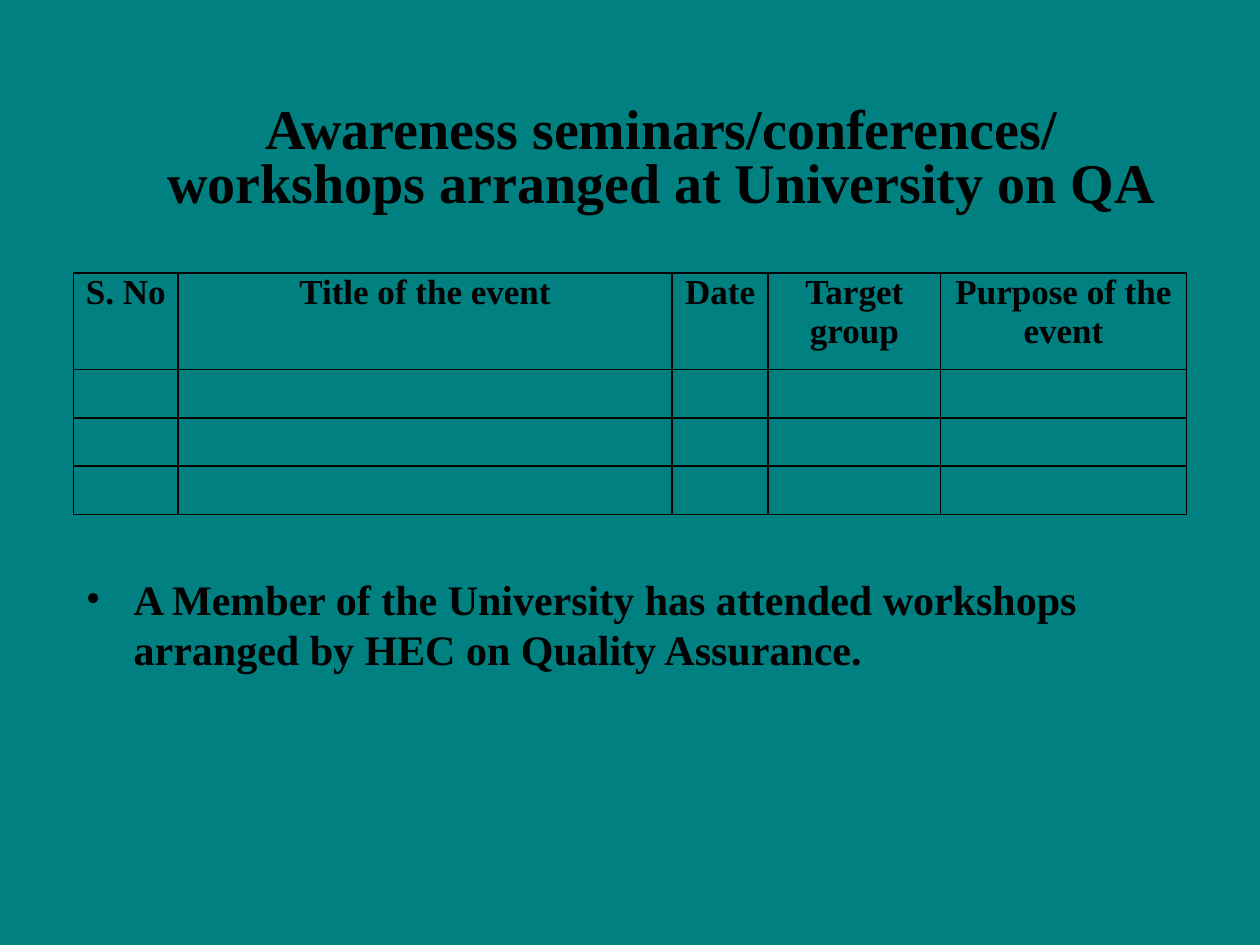
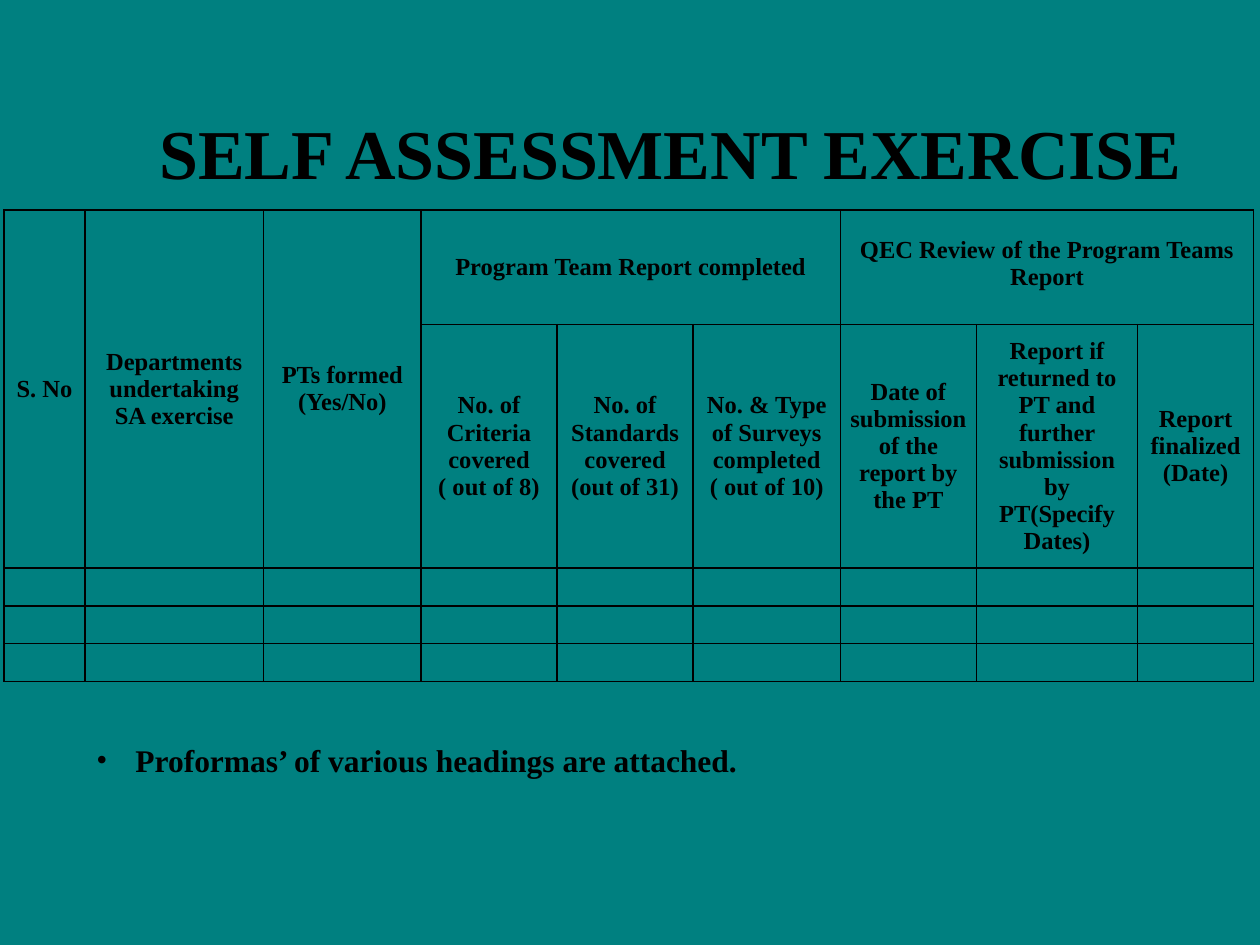
from lxml import etree
from pptx import Presentation
from pptx import util as u
from pptx.dml.color import RGBColor
from pptx.enum import text
from pptx.oxml.ns import qn

TEAL = RGBColor(0x00, 0x80, 0x80)
BLACK = RGBColor(0x00, 0x00, 0x00)
FONT = "Times New Roman"
CENTER = text.PP_ALIGN.CENTER
TOP, MIDDLE, BOTTOM = (text.MSO_ANCHOR.TOP, text.MSO_ANCHOR.MIDDLE,
                       text.MSO_ANCHOR.BOTTOM)

# Boxes are (left, top, width, height) in units of a 12 x 9 grid.
UNIT = u.Inches(10) / 12


def place(box):
    return [u.Emu(round(n * UNIT)) for n in box]


def shares(total, weights):
    return [u.Emu(round(total * w / sum(weights))) for w in weights]


def add_run(p, words, size):
    r = p.add_run()
    r.text = words
    r.font.name = FONT
    r.font.size = u.Pt(size)
    r.font.bold = True
    r.font.color.rgb = BLACK


def add_slide(prs):
    slide = prs.slides.add_slide(prs.slide_layouts[6])
    slide.background.fill.solid()
    slide.background.fill.fore_color.rgb = TEAL
    return slide


def add_text(slide, box, words, size, anchor=TOP):
    tf = slide.shapes.add_textbox(*place(box)).text_frame
    tf.word_wrap = True
    tf.vertical_anchor = anchor
    p = tf.paragraphs[0]
    add_run(p, words, size)
    return p


def add_title(slide, box, words, size, align=text.PP_ALIGN.LEFT):
    p = add_text(slide, box, words, size, BOTTOM)
    p.alignment = align
    p.line_spacing = 0.8


def add_bullet(slide, box, words, size, indent):
    pPr = add_text(slide, box, words, size)._p.get_or_add_pPr()
    pPr.set("marL", str(u.Inches(indent)))
    pPr.set("indent", str(-u.Inches(indent)))
    color = etree.SubElement(pPr, qn("a:buClr"))
    etree.SubElement(color, qn("a:srgbClr"), val=str(BLACK))
    etree.SubElement(pPr, qn("a:buFont"), typeface=FONT)
    etree.SubElement(pPr, qn("a:buChar"), char="•")


def add_borders(cell):
    tcPr = cell._tc.get_or_add_tcPr()
    for side in ("lnL", "lnR", "lnT", "lnB"):
        ln = etree.SubElement(tcPr, qn("a:" + side), w=str(u.Pt(1)))
        fill = etree.SubElement(ln, qn("a:solidFill"))
        etree.SubElement(fill, qn("a:srgbClr"), val=str(BLACK))


def add_grid(slide, box, cols, rows):
    """Add an empty ruled table; cols and rows are relative sizes."""
    frame = slide.shapes.add_table(len(rows), len(cols), *place(box))
    table = frame.table
    table.first_row = table.horz_banding = False
    for col, width in zip(table.columns, shares(frame.width, cols)):
        col.width = width
    for row, height in zip(table.rows, shares(frame.height, rows)):
        row.height = height
    for cell in table.iter_cells():
        add_borders(cell)
        cell.fill.background()
        cell.margin_left = cell.margin_right = u.Inches(0.07)
        cell.margin_top = cell.margin_bottom = 0
    return table


def write_heading(cell, words, size, anchor):
    """Write a centred heading, one paragraph for each line of words."""
    cell.vertical_anchor = anchor
    tf = cell.text_frame
    for i, line in enumerate(words.split("\n")):
        p = tf.add_paragraph() if i else tf.paragraphs[0]
        p.alignment = CENTER
        add_run(p, line, size)


def events_slide(prs):
    slide = add_slide(prs)
    add_title(slide, (1.3, 0.7, 10, 1.4),
              "Awareness seminars/conferences/ workshops arranged at "
              "University on QA", 32, CENTER)
    table = add_grid(slide, (0.7, 2.6, 10.6, 2.3),
                     (0.83, 3.92, 0.76, 1.37, 1.95), (2, 1, 1, 1))
    headings = ("S. No", "Title of the event", "Date", "Target group",
                "Purpose of the event")
    for col, words in enumerate(headings):
        write_heading(table.cell(0, col), words, 20, TOP)
    add_bullet(slide, (0.7, 5.4, 10.7, 3.24),
               "A Member of the University has attended workshops arranged "
               "by HEC on Quality Assurance.", 24, 0.38)


def assessment_slide(prs):
    slide = add_slide(prs)
    add_title(slide, (1.4, 0.36, 10.3, 1.54), "SELF ASSESSMENT EXERCISE", 40)
    table = add_grid(slide, (0.04, 2, 11.9, 4.49),
                     (0.64, 1.42, 1.25, 1.08, 1.08, 1.17, 1.08, 1.28, 0.92),
                     (0.91, 1.93, 0.3, 0.3, 0.3))
    tall = ("S. No", "Departments undertaking SA exercise",
            "PTs formed\n(Yes/No)")
    groups = (
        ("Program Team Report completed", MIDDLE,
         ("No. of Criteria\ncovered\n( out of 8)",
          "No. of Standards covered\n(out of 31)",
          "No. & Type of Surveys completed\n( out of 10)")),
        ("QEC Review of the Program Teams Report", TOP,
         ("Date of submission of the report by the PT",
          "Report if returned to PT and further submission by "
          "PT(Specify Dates)",
          "Report finalized (Date)")),
    )
    for col, words in enumerate(tall):
        table.cell(0, col).merge(table.cell(1, col))
        write_heading(table.cell(0, col), words, 14, MIDDLE)
    for g, (group, anchor, parts) in enumerate(groups):
        first = len(tall) + g * len(parts)
        head = table.cell(0, first)
        head.merge(table.cell(0, first + len(parts) - 1))
        write_heading(head, group, 14, anchor)
        if anchor == TOP:
            head.margin_top = u.Inches(0.21)
        for col, words in enumerate(parts, first):
            write_heading(table.cell(1, col), words, 14, MIDDLE)
    add_bullet(slide, (0.8, 7, 10.57, 0.84),
               "Proformas’ of various headings are attached.", 18, 0.31)


def main():
    prs = Presentation()
    prs.slide_width, prs.slide_height = u.Inches(10), u.Inches(7.5)
    events_slide(prs)
    assessment_slide(prs)
    prs.save("out.pptx")


if __name__ == "__main__":
    main()
